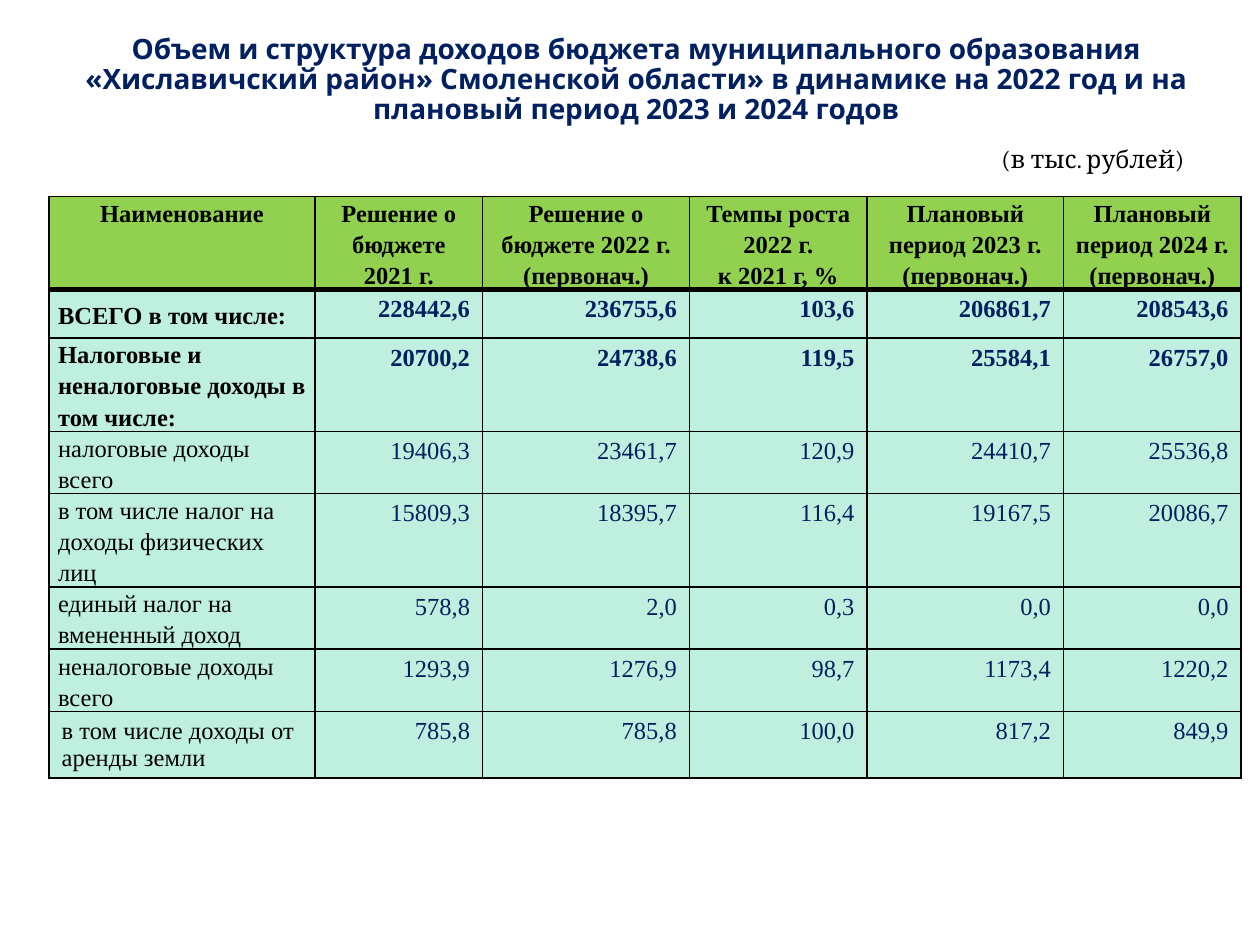
from lxml import etree
from pptx import Presentation
from pptx.dml.color import RGBColor
from pptx.enum.text import MSO_ANCHOR, MSO_AUTO_SIZE, PP_ALIGN
from pptx.oxml.ns import qn
from pptx.util import Cm, Pt

LEFT, CENTER, RIGHT = PP_ALIGN.LEFT, PP_ALIGN.CENTER, PP_ALIGN.RIGHT
TOP, MIDDLE, BOTTOM = MSO_ANCHOR.TOP, MSO_ANCHOR.MIDDLE, MSO_ANCHOR.BOTTOM
NO_FIT = MSO_AUTO_SIZE.NONE

BLACK, NAVY, GREEN, MINT = "000000", "002060", "92D050", "BFEFDF"
TITLE = ("Объем и структура доходов бюджета муниципального образования "
         "«Хиславичский район» Смоленской области» в динамике на 2022 год "
         "и на плановый период 2023 и 2024 годов")
COLS = [5.36, 3.38, 4.17, 3.58, 3.96, 3.58]
ROW_HEIGHT = 0.97
HEADERS = [
    ["Наименование"],
    ["Решение о бюджете\v2021 г."],
    ["Решение о бюджете 2022 г.", "(первонач.)"],
    ["Темпы роста", "2022 г.", "к 2021 г, %"],
    ["Плановый период 2023 г.", "(первонач.)"],
    ["Плановый период 2024 г.", "(первонач.)"],
]
ROWS = [
    ["ВСЕГО в том числе:", "228442,6", "236755,6", "103,6", "206861,7", "208543,6"],
    ["Налоговые и неналоговые доходы в том числе:",
     "20700,2", "24738,6", "119,5", "25584,1", "26757,0"],
    ["налоговые доходы всего", "19406,3", "23461,7", "120,9", "24410,7", "25536,8"],
    ["в том числе налог на доходы физических лиц",
     "15809,3", "18395,7", "116,4", "19167,5", "20086,7"],
    ["единый налог на вмененный доход", "578,8", "2,0", "0,3", "0,0", "0,0"],
    ["неналоговые доходы всего", "1293,9", "1276,9", "98,7", "1173,4", "1220,2"],
    ["в том числе доходы от аренды земли", "785,8", "785,8", "100,0", "817,2", "849,9"],
]
BOLD_ROWS = 2


def rgb(value):
    return RGBColor.from_string(value)


class Deck:
    def __init__(self, prs):
        self.s = prs.slides.add_slide(prs.slide_layouts[1])
        self.table_font = "Times New Roman"

    def text(self, tf, lines, font, size, color, bold, align, spacing=None):
        for i, line in enumerate(lines):
            p = tf.add_paragraph() if i else tf.paragraphs[0]
            p.alignment = align
            if spacing:
                p.line_spacing = spacing
            for j, part in enumerate(line.split("\v")):
                if j:
                    p.add_line_break()
                r = p.add_run()
                r.text = part
                r.font.name = font
                r.font.size = Pt(size)
                r.font.bold = bold
                r.font.color.rgb = rgb(color)

    def place(self, sp, left, top, width, height):
        sp.left, sp.top, sp.width, sp.height = map(Cm, (left, top, width, height))
        tf = sp.text_frame
        tf.word_wrap = True
        tf.auto_size = NO_FIT
        return tf

    def title(self, title):
        tf = self.place(self.s.shapes.title, 1.4, 1.19, 22.86, 3.38)
        tf.vertical_anchor = BOTTOM
        tf.margin_bottom = Cm(2.03)
        self.text(tf, [title], "Noto Sans", 16, NAVY, True, CENTER, 0.9)

    def unit_note(self, note):
        tf = self.place(self.s.placeholders[1], 2.18, 2.77, 21.95, 15.29)
        pPr = tf.paragraphs[0]._p.get_or_add_pPr()
        pPr.set("marL", str(Cm(0.2)))
        pPr.set("indent", "0")
        etree.SubElement(pPr, qn("a:buNone"))
        tf.paragraphs[0].space_before = Pt(0)
        self.text(tf, [note], "Cambria", 14, BLACK, False, RIGHT)

    def borders(self, cell, widths):
        tcPr = cell._tc.get_or_add_tcPr()
        for side, width in zip("LRTB", widths):
            ln = etree.SubElement(tcPr, qn(f"a:ln{side}"), w=str(Pt(width)))
            fill = etree.SubElement(ln, qn("a:solidFill"))
            etree.SubElement(fill, qn("a:srgbClr"), val=BLACK)

    def cell(self, cell, lines, fill, widths, color, bold, align,
             anchor=TOP, tight=False):
        self.borders(cell, widths)
        cell.fill.solid()
        cell.fill.fore_color.rgb = rgb(fill)
        cell.vertical_anchor = anchor
        if tight:
            cell.margin_left = cell.margin_right = Cm(0.18)
            cell.margin_top = cell.margin_bottom = 0
        self.text(cell.text_frame, lines, self.table_font, 14, color, bold, align,
                  1.15 if tight else None)

    def table(self, headers, rows):
        frame = self.s.shapes.add_table(len(rows) + 1, len(headers), Cm(0.99),
                                        Cm(3.96), Cm(sum(COLS)), Cm(12.62))
        table = frame.table
        table.horz_banding = False
        for col, width in zip(table.columns, COLS):
            col.width = Cm(width)
        for row in table.rows:
            row.height = Cm(ROW_HEIGHT)
        frame.height = Cm(12.62)
        for c, lines in enumerate(headers):
            self.cell(table.cell(0, c), lines, GREEN, (1, 1, 1, 3), BLACK, True,
                      CENTER, tight=True)
        for r, (label, *values) in enumerate(rows, 1):
            widths = (1, 1, 3 if r == 1 else 1, 1)
            bold = r <= BOLD_ROWS
            last = r == len(rows)
            self.cell(table.cell(r, 0), [label], MINT, widths, BLACK, bold, LEFT,
                      TOP if last else MIDDLE, not last)
            for c, value in enumerate(values, 1):
                self.cell(table.cell(r, c), [value], MINT, widths, NAVY, bold, RIGHT)


def main():
    prs = Presentation()
    prs.slide_width, prs.slide_height = Cm(25.4), Cm(19.05)
    deck = Deck(prs)
    deck.title(TITLE)
    deck.unit_note("(в тыс. рублей)")
    deck.table(HEADERS, ROWS)
    prs.save("out.pptx")


if __name__ == "__main__":
    main()
